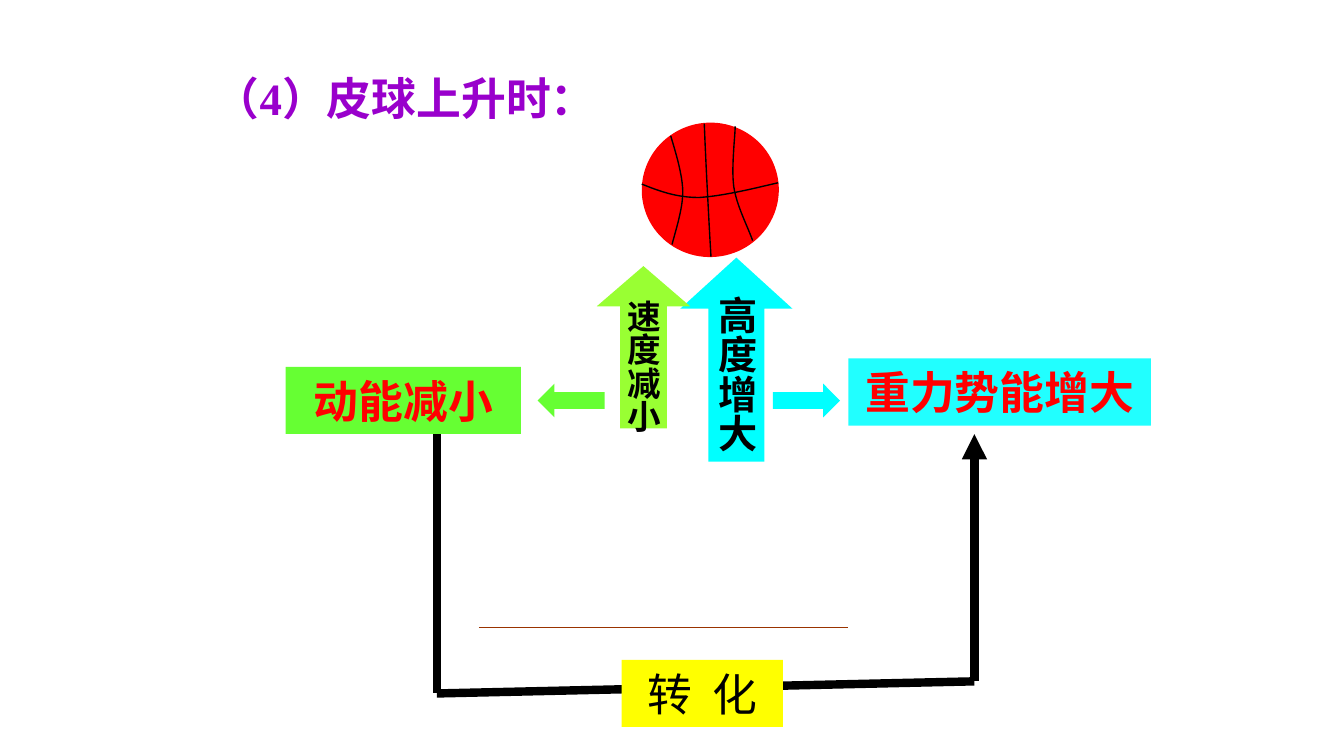
import pptx
import pptx.util
import pptx.oxml.ns
from lxml import etree
from pptx.dml.color import RGBColor
from pptx.enum.shapes import MSO_CONNECTOR, MSO_SHAPE
from pptx.enum.text import MSO_ANCHOR, MSO_AUTO_SIZE, PP_ALIGN

CELL = 0.25  # inches; the slide is 40 columns by 22.5 rows
COLUMNS, ROWS = 40, 22.5
LATIN, CJK = "Times New Roman", "Noto Sans CJK SC"

BLACK = RGBColor(0, 0, 0)
RED = RGBColor(0xFF, 0, 0)
PURPLE = RGBColor(0x99, 0, 0xCC)
CYAN = RGBColor(0, 0xFF, 0xFF)
LIME = RGBColor(0x99, 0xFF, 0x33)
GREEN = RGBColor(0x66, 0xFF, 0x33)
YELLOW = RGBColor(0xFF, 0xFF, 0)
BROWN = RGBColor(0x99, 0x33, 0)

# Bezier chains in grid cells: a start, then two controls and an end per curve
SEAMS = [
    [(19.96, 4.04), (20.04, 4.32), (20.32, 5.16), (20.32, 5.72),
     (20.32, 6.24), (20.08, 6.96), (20, 7.28)],
    [(21.88, 3.76), (21.88, 4.08), (21.76, 5), (21.84, 5.56),
     (21.92, 6.12), (22.28, 6.8), (22.4, 7.16)],
    [(19.1, 5.48), (19.6, 5.68), (20.12, 5.88), (20.8, 5.88),
     (21.48, 5.84), (22.32, 5.64), (23.16, 5.44)],
    [(20.96, 3.68), (20.96, 3.68), (21.04, 5.64), (21.16, 7.64)],
]


def cells(*values):
    return [pptx.util.Inches(v * CELL) for v in values]


def add_xml(parent, tag, **attributes):
    return etree.SubElement(parent, pptx.oxml.ns.qn(tag), **attributes)


def write(s, text, size=24, color=RED, font=LATIN, bold=True, align=PP_ALIGN.CENTER,
          vertical=False):
    tf = s.text_frame
    tf.word_wrap = not vertical
    if vertical:
        tf.vertical_anchor = MSO_ANCHOR.MIDDLE
        tf._txBody.bodyPr.set("vert", "eaVert")
    else:
        tf.vertical_anchor = MSO_ANCHOR.TOP
        tf.auto_size = MSO_AUTO_SIZE.SHAPE_TO_FIT_TEXT
    p = tf.paragraphs[0]
    p.alignment = align
    r = p.add_run()
    r.text = text
    r.font.size = pptx.util.Pt(size)
    r.font.bold = bold
    r.font.color.rgb = color
    r.font.name = font
    add_xml(r.font._element, "a:ea", typeface=CJK)


def add_block(shapes, kind, box, fill, adjust=(), alpha=None):
    s = shapes.add_shape(kind, *cells(*box))
    s.shadow.inherit = False
    s.fill.solid()
    s.fill.fore_color.rgb = fill
    s.line.fill.background()
    for i, value in enumerate(adjust):
        s.adjustments[i] = value
    if alpha:
        color = s._element.spPr.find(".//" + pptx.oxml.ns.qn("a:srgbClr"))
        add_xml(color, "a:alpha", val=str(alpha * 1000))
    return s


def add_line(shapes, start, end, color=BLACK, width=4.5, arrow=False):
    s = shapes.add_connector(MSO_CONNECTOR.STRAIGHT, *cells(*start, *end))
    s.line.color.rgb = color
    s.line.width = pptx.util.Pt(width)
    if arrow:
        add_xml(s.line._get_or_add_ln(), "a:tailEnd", type="triangle")
    add_xml(s._element.spPr, "a:effectLst")


def curve_points(chain, steps=12):
    """Sample a chain of cubic Bezier curves."""
    points = [chain[0]]
    for i in range(0, len(chain) - 1, 3):
        for n in range(1, steps + 1):
            t = n / steps
            weights = ((1 - t) ** 3, 3 * t * (1 - t) ** 2, 3 * t * t * (1 - t), t ** 3)
            points.append(tuple(sum(w * c for w, c in zip(weights, axis))
                                for axis in zip(*chain[i:i + 4])))
    return points


def add_seam(shapes, chain):
    start, *rest = [cells(*point) for point in curve_points(chain)]
    builder = shapes.build_freeform(*start)
    builder.add_line_segments(rest, close=False)
    s = builder.convert_to_shape()
    s.shadow.inherit = False
    s.fill.background()
    s.line.color.rgb = BLACK
    s.line.width = pptx.util.Pt(0.75)


def add_ball(shapes):
    ball = shapes.add_group_shape().shapes
    s = add_block(ball, MSO_SHAPE.OVAL, (19.12, 3.67, 4.04, 3.96), RED)
    s.rotation = 354.4
    s.line.color.rgb = RED
    s.line.width = pptx.util.Pt(0.75)
    for chain in SEAMS:
        add_seam(ball, chain)


def add_conversion(shapes):
    """Path from kinetic energy to potential energy with its label."""
    group = shapes.add_group_shape().shapes
    left, right, top = 13, 29, 12.92
    corners = [(left, top), (left, 20.64), (right, 20.28), (right, top)]
    for start, end in zip(corners, corners[1:]):
        add_line(group, start, end, arrow=end == corners[-1])
    s = add_block(group, MSO_SHAPE.RECTANGLE, (18.5, 19.64, 4.8, 2), YELLOW)
    write(s, "转  化", color=BLACK, font=CJK, bold=False)


def main():
    prs = pptx.Presentation()
    prs.slide_width, prs.slide_height = cells(COLUMNS, ROWS)
    shapes = prs.slides.add_slide(prs.slide_layouts[6]).shapes

    add_ball(shapes)
    write(shapes.add_textbox(*cells(6, 1.92, 11.5, 2)), "（4）皮球上升时：",
          color=PURPLE, align=PP_ALIGN.LEFT)

    for text, size, box, fill, head in [
        ("高度增大", 21, (20.25, 7.67, 3.33, 6.07), CYAN, 0.455),
        ("速度减小", 18, (17.76, 7.92, 2.78, 4.83), LIME, 0.431),
    ]:
        s = add_block(shapes, MSO_SHAPE.UP_ARROW, box, fill, (0.5, head))
        write(s, text, size=size, color=BLACK, vertical=True)

    add_line(shapes, (14.25, 18.67), (25.25, 18.67), BROWN, 0.75)

    for text, box, fill, alpha in [
        ("重力势能增大", (25.25, 10.67, 9, 2), CYAN, 87),
        ("动能减小", (8.5, 10.92, 7, 2), GREEN, None),
    ]:
        write(add_block(shapes, MSO_SHAPE.RECTANGLE, box, fill, alpha=alpha), text)

    for column, fill, turn in [(23, CYAN, 180), (16, GREEN, 0)]:
        s = add_block(shapes, MSO_SHAPE.LEFT_ARROW, (column, 11.42, 2, 1), fill)
        s.rotation = turn

    add_conversion(shapes)
    prs.save("out.pptx")


if __name__ == "__main__":
    main()
